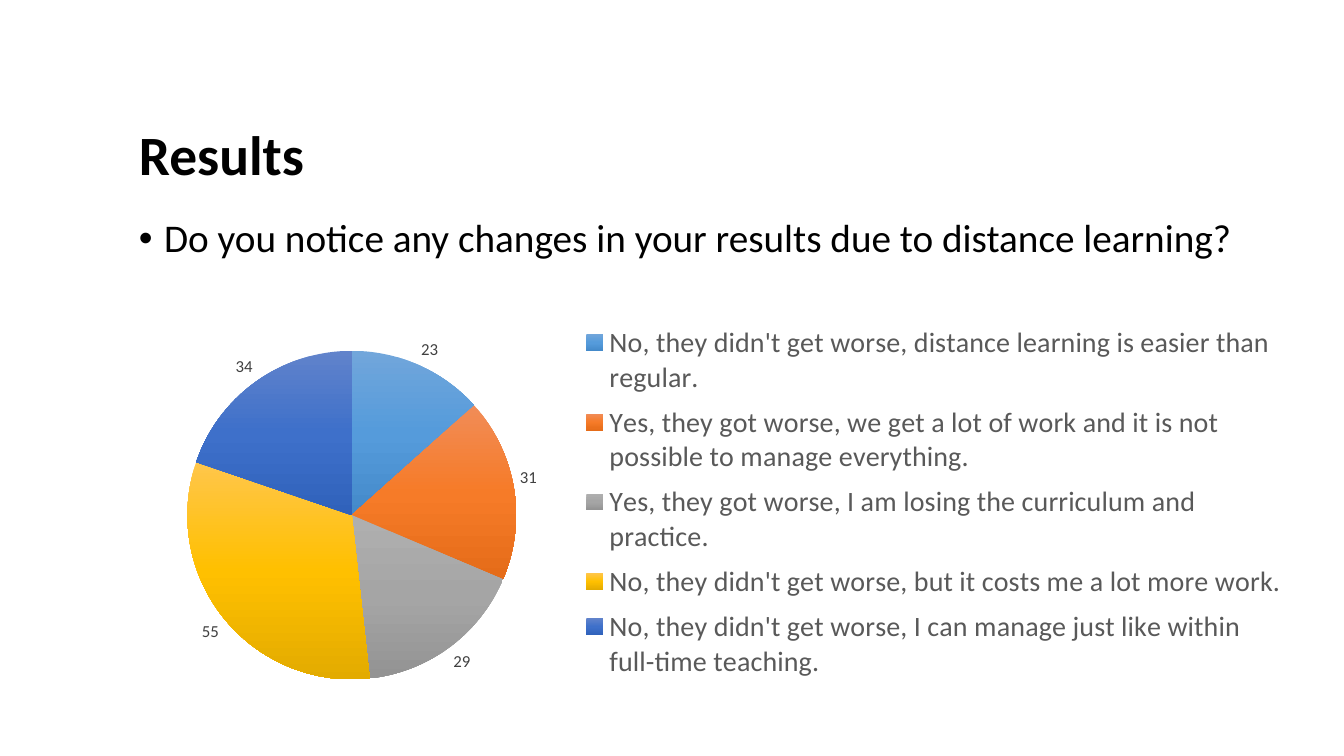
from lxml import etree
from pptx import Presentation
from pptx.chart.data import CategoryChartData
from pptx.dml.color import RGBColor
from pptx.enum.chart import XL_CHART_TYPE as ChartType
from pptx.enum.chart import XL_LABEL_POSITION as LabelPosition
from pptx.enum.chart import XL_LEGEND_POSITION as LegendPosition
from pptx.enum.text import MSO_ANCHOR as Anchor
from pptx.oxml import parse_xml
from pptx.oxml.ns import qn
from pptx.util import Inches, Pt

NAMESPACES = (
    'xmlns:a="http://schemas.openxmlformats.org/drawingml/2006/main" '
    'xmlns:c="http://schemas.openxmlformats.org/drawingml/2006/chart"'
)
ANSWERS = [
    ("No, they didn't get worse, distance learning is easier than regular.", 23,
     ("71A6DB", "559BDB", "448ACA")),
    ("Yes, they got worse, we get a lot of work and it is not possible to manage everything.", 31,
     ("F18C57", "F67B28", "E56C19")),
    ("Yes, they got worse, I am losing the curriculum and practice.", 29,
     ("AFAFAF", "A5A5A5", "939393")),
    ("No, they didn't get worse, but it costs me a lot more work.", 55,
     ("FFC64B", "FFC000", "E3AB00")),
    ("No, they didn't get worse, I can manage just like within full-time teaching.", 34,
     ("6183CB", "3E70CA", "3062BB")),
]


def color(hex_text):
    return RGBColor.from_string(hex_text)


class SlideBuilder:
    """Draws styled elements on one slide, placed on a grid of 100 columns and 100 rows."""

    font_name = "Calibri"
    ink = "000000"

    def __init__(self, presentation):
        self.column = presentation.slide_width / 100
        self.row = presentation.slide_height / 100
        self.slide = presentation.slides.add_slide(presentation.slide_layouts[6])
        self.slide.background.fill.solid()
        self.slide.background.fill.fore_color.rgb = color("FFFFFF")

    def place(self, left, top, width, height):
        return (round(left * self.column), round(top * self.row),
                round(width * self.column), round(height * self.row))

    def style(self, font, size, hex_text=ink, bold=False):
        font.name = self.font_name
        font.size = Pt(size)
        font.bold = bold
        font.color.rgb = color(hex_text)

    def text(self, box, words, size, bold=False, anchor=Anchor.TOP, bullet=False):
        frame = self.slide.shapes.add_textbox(*self.place(*box)).text_frame
        frame.word_wrap = True
        frame.vertical_anchor = anchor
        paragraph = frame.paragraphs[0]
        paragraph.line_spacing = 0.9
        if bullet:
            properties = paragraph._p.get_or_add_pPr()
            properties.set("marL", str(Inches(0.25)))
            properties.set("indent", str(-Inches(0.25)))
            etree.SubElement(properties, qn("a:buFont")).set("typeface", "Arial")
            etree.SubElement(properties, qn("a:buChar")).set("char", "•")
        run = paragraph.add_run()
        run.text = words
        self.style(run.font, size, bold=bold)

    def arrange(self, part, index, target, percents):
        for old in part.findall(qn("c:layout")):
            part.remove(old)
        inner = '<c:layoutTarget val="inner"/>' if target else ""
        modes = "".join(f'<c:{axis}Mode val="edge"/>' for axis in "xy")
        sizes = "".join(f'<c:{side} val="{percent / 100:.3f}"/>'
                        for side, percent in zip("xywh", percents))
        part.insert(index, parse_xml(
            f"<c:layout {NAMESPACES}><c:manualLayout>{inner}{modes}{sizes}"
            "</c:manualLayout></c:layout>"))

    def shade(self, point, shades):
        properties = point.format.fill._xPr
        stops = "".join(
            f'<a:gs pos="{position}"><a:srgbClr val="{shade}"/></a:gs>'
            for position, shade in zip((0, 50000, 100000), shades))
        properties.insert(0, parse_xml(
            f'<a:gradFill {NAMESPACES} rotWithShape="1"><a:gsLst>{stops}</a:gsLst>'
            '<a:lin ang="5400000" scaled="0"/></a:gradFill>'))
        point.format.line.fill.background()

    def pie(self, box, answers):
        data = CategoryChartData()
        data.categories = [answer for answer, _, _ in answers]
        data.add_series("Series 1", [count for _, count, _ in answers])
        chart = self.slide.shapes.add_chart(ChartType.PIE, *self.place(*box), data).chart
        self.style(chart.font, 10)
        chart.has_title = False
        chart.has_legend = True
        legend = chart.legend
        legend.position = LegendPosition.RIGHT
        legend.include_in_layout = False
        self.style(legend.font, 20, "595959")
        self.arrange(legend._element, 1, False, (37.6, 5, 60.5, 91))
        self.arrange(chart._chartSpace.chart.plotArea, 0, True, (3.8, 13.7, 28.2, 80))
        plot = chart.plots[0]
        plot.vary_by_categories = True
        for index, (_, _, shades) in enumerate(answers):
            self.shade(plot.series[0].points[index], shades)
        plot.has_data_labels = True
        labels = plot.data_labels
        labels.show_value = True
        labels.show_percentage = False
        labels.position = LabelPosition.OUTSIDE_END
        self.style(labels.font, 12, "404040")


def main():
    presentation = Presentation()
    presentation.slide_width = Inches(13.33)
    presentation.slide_height = Inches(7.5)
    builder = SlideBuilder(presentation)
    builder.text((9.6, 16, 86.27, 9.73), "Results", 39.6, bold=True, anchor=Anchor.MIDDLE)
    builder.text((9.6, 28.27, 89.2, 57.2),
                 "Do you notice any changes in your results due to distance learning?",
                 28, bullet=True)
    builder.pie((10.65, 38.93, 86.72, 54.4), ANSWERS)
    presentation.save("out.pptx")


if __name__ == "__main__":
    main()
